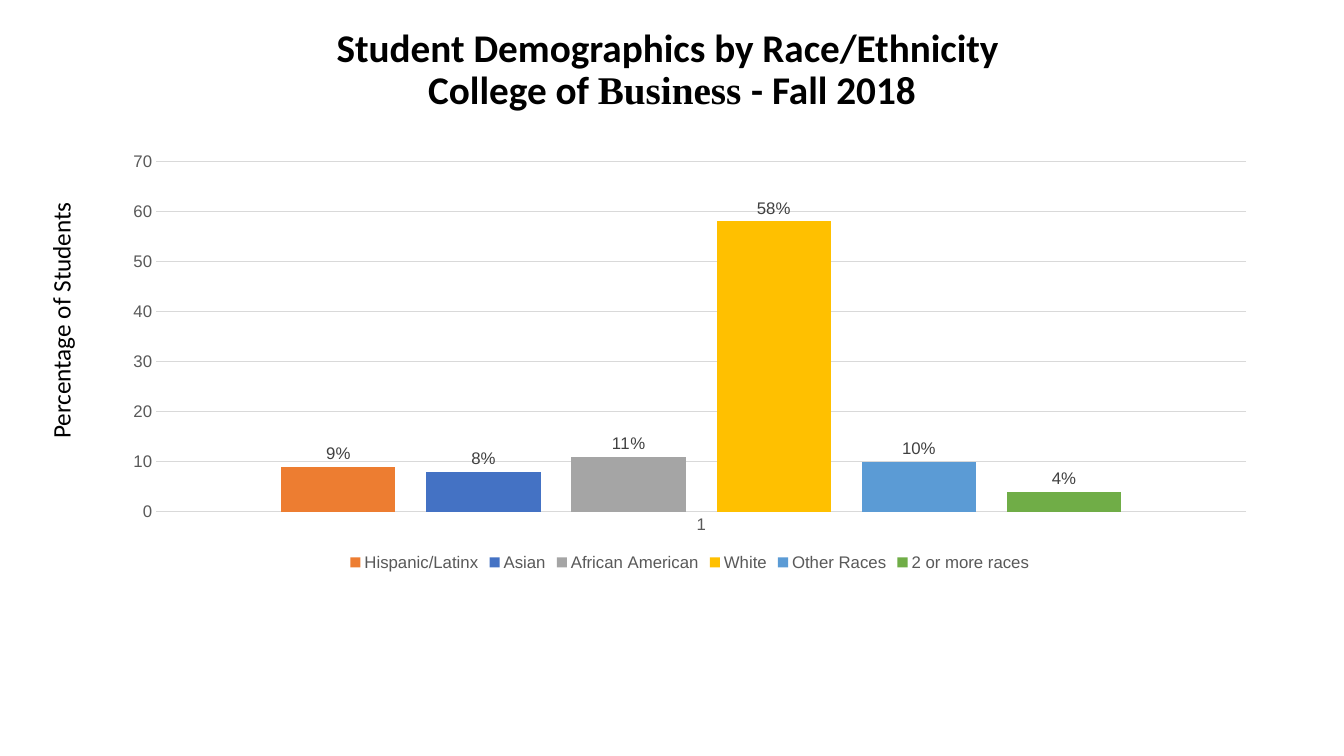
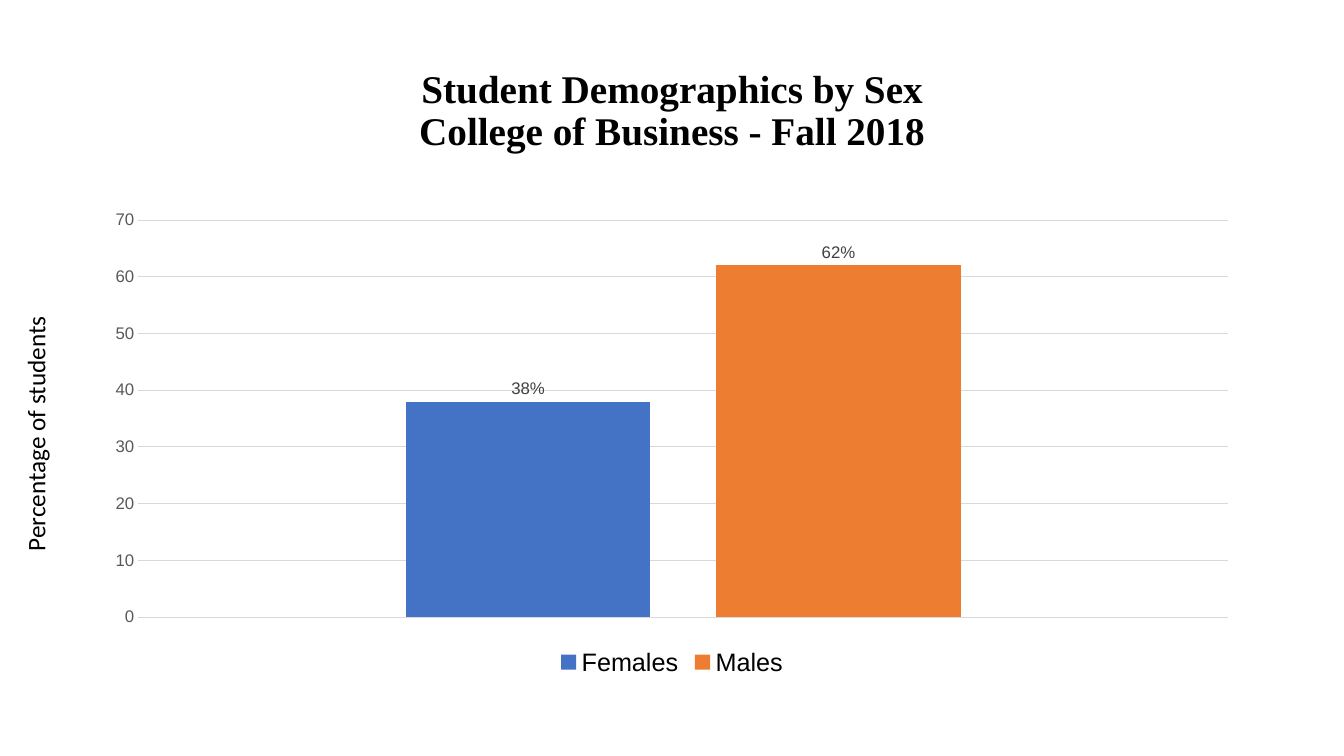
from pptx import Presentation
from pptx import util as u
from pptx.chart.data import CategoryChartData
from pptx.dml.color import RGBColor
from pptx.enum import chart as ch
from pptx.enum import text as t

PX = 9525  # EMU per px, slide is 1280 x 720 px

BLACK = RGBColor(0x00, 0x00, 0x00)
DARK_GREY = RGBColor(0x40, 0x40, 0x40)
MID_GREY = RGBColor(0x59, 0x59, 0x59)
LIGHT_GREY = RGBColor(0xD9, 0xD9, 0xD9)
ORANGE = RGBColor(0xED, 0x7D, 0x31)
BLUE = RGBColor(0x44, 0x72, 0xC4)
GREY = RGBColor(0xA5, 0xA5, 0xA5)
GOLD = RGBColor(0xFF, 0xC0, 0x00)
SKY = RGBColor(0x5B, 0x9B, 0xD5)
GREEN = RGBColor(0x70, 0xAD, 0x47)

SANS, SERIF, CHART_FONT = "Calibri", "Times New Roman", "Arial"

# Content: boxes are left, top, width, height in px
SLIDES = [
    {
        "title": [("Student Demographics by Race/Ethnicity \nCollege of ", SANS),
                  ("Business ", SERIF), ("- Fall 2018", SANS)],
        "title_box": (88, -2, 1104, 139),
        "series": [("Hispanic/Latinx", 9, ORANGE), ("Asian", 8, BLUE),
                   ("African American", 11, GREY), ("White", 58, GOLD),
                   ("Other Races", 10, SKY), ("2 or more races", 4, GREEN)],
        "chart_box": (105, 137, 1104, 411),
        "category_axis": True,
        "legend": (12, MID_GREY),
        "label": "Percentage of Students",
        "label_box": (-77, 274, 269, 38),
    },
    {
        "title": [("Student Demographics by Sex\nCollege of Business - Fall 2018", SERIF)],
        "title_box": (35, 38, 1210, 137),
        "series": [("Females", 38, BLUE), ("Males", 62, ORANGE)],
        "chart_box": (88, 192, 1104, 457),
        "category_axis": False,
        "legend": (18, BLACK),
        "label": "Percentage of students",
        "label_box": (-81, 378, 252, 61),
    },
]


def emu(box):
    return [u.Emu(length * PX) for length in box]


def style(font, size, color, name=CHART_FONT, bold=False):
    font.size, font.name, font.bold = u.Pt(size), name, bold
    font.color.rgb = color


def write(para, text, size=18, color=BLACK, name=SANS, bold=False):
    """Add text to a paragraph, with a line break at each newline."""
    for number, line in enumerate(text.split("\n")):
        if number:
            para.add_line_break()
        span = para.add_run()
        span.text = line
        style(span.font, size, color, name, bold)


def rule(line):
    line.color.rgb = LIGHT_GREY
    line.width = u.Pt(0.75)


def add_title(page, spans, box):
    title = page.shapes.title
    title.left, title.top, title.width, title.height = emu(box)
    frame = title.text_frame
    frame.word_wrap = True
    frame.auto_size = t.MSO_AUTO_SIZE.NONE
    frame.vertical_anchor = t.MSO_ANCHOR.MIDDLE
    para = frame.paragraphs[0]
    para.alignment = t.PP_ALIGN.CENTER
    para.line_spacing = 0.9
    for text, name in spans:
        write(para, text, size=28, name=name, bold=True)


def add_columns(page, series, box, category_axis, legend):
    data = CategoryChartData()
    data.categories = ["1"]
    for name, value, _ in series:
        data.add_series(name, [value])
    chart = page.shapes.add_chart(ch.XL_CHART_TYPE.COLUMN_CLUSTERED, *emu(box), data).chart
    chart.has_title = False
    style(chart.font, 10, BLACK)

    # Columns and their percentages
    plot = chart.plots[0]
    plot.gap_width, plot.overlap, plot.vary_by_categories = 219, -27, False
    for column, (_, _, color) in zip(plot.series, series):
        column.format.fill.solid()
        column.format.fill.fore_color.rgb = color
        labels = column.data_labels
        labels.show_value = True
        labels.number_format, labels.number_format_is_linked = '0"%"', False
        labels.position = ch.XL_LABEL_POSITION.OUTSIDE_END
        style(labels.font, 12, DARK_GREY)

    # Axes
    for axis in (chart.category_axis, chart.value_axis):
        axis.major_tick_mark = axis.minor_tick_mark = ch.XL_TICK_MARK.NONE
        style(axis.tick_labels.font, 12, MID_GREY)
    chart.category_axis.visible = category_axis
    rule(chart.category_axis.format.line)
    values = chart.value_axis
    values.minimum_scale, values.maximum_scale, values.major_unit = 0, 70, 10
    values.format.line.fill.background()
    values.has_major_gridlines = True
    rule(values.major_gridlines.format.line)

    # Legend
    chart.has_legend = True
    chart.legend.position = ch.XL_LEGEND_POSITION.BOTTOM
    chart.legend.include_in_layout = False
    style(chart.legend.font, *legend)


def add_axis_label(page, text, box):
    label = page.shapes.add_textbox(*emu(box))
    label.rotation = 270
    label.text_frame.word_wrap = True
    label.text_frame.auto_size = t.MSO_AUTO_SIZE.SHAPE_TO_FIT_TEXT
    write(label.text_frame.paragraphs[0], text)


def main():
    deck = Presentation()
    deck.slide_width, deck.slide_height = emu((1280, 720))
    title_only = deck.slide_layouts[5]
    for content in SLIDES:
        page = deck.slides.add_slide(title_only)
        add_title(page, content["title"], content["title_box"])
        add_columns(page, content["series"], content["chart_box"],
                    content["category_axis"], content["legend"])
        add_axis_label(page, content["label"], content["label_box"])
    deck.save("out.pptx")


if __name__ == "__main__":
    main()
